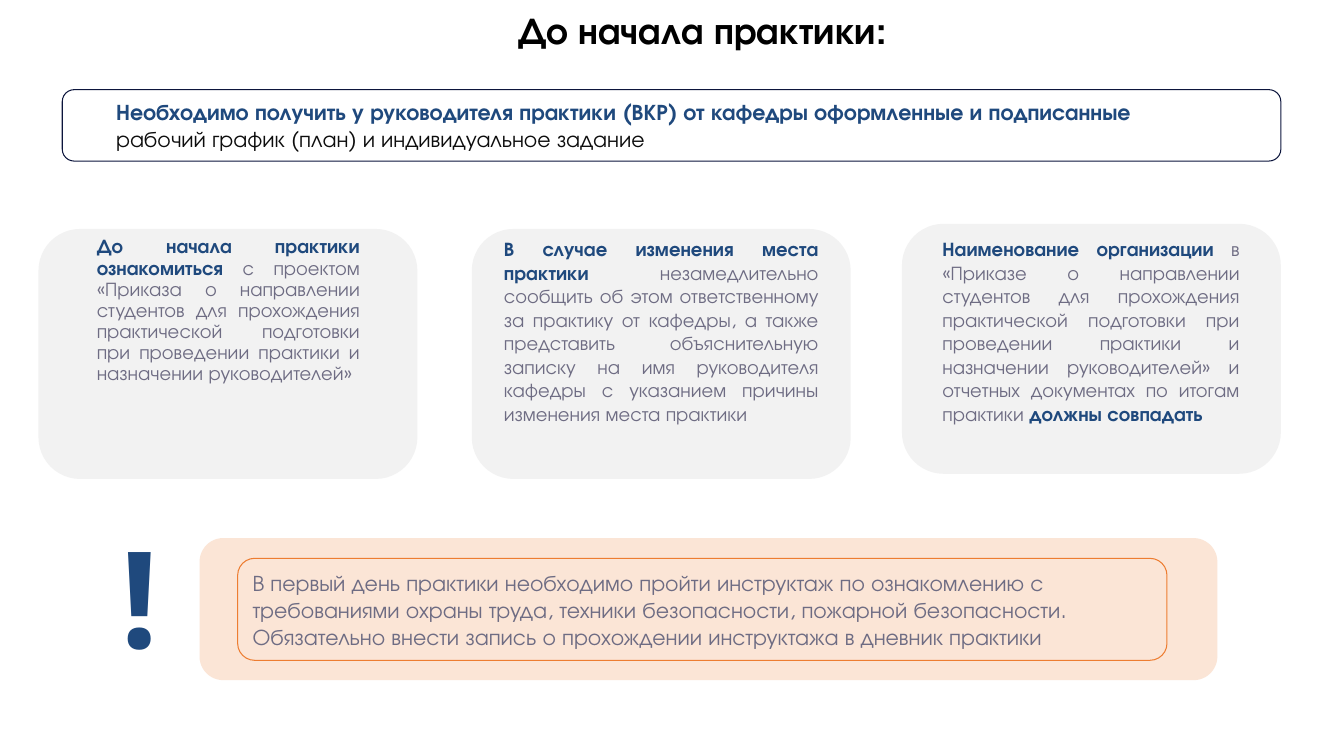
from dataclasses import dataclass, field

from pptx import Presentation
from pptx.dml.color import RGBColor
from pptx.enum.shapes import MSO_SHAPE as Shape
from pptx.enum.text import MSO_ANCHOR as Anchor, PP_ALIGN as Align
from pptx.util import Cm, Pt

NAVY, GREY, INK, BLACK = "1F497D", "6E6C83", "0D0D0D", "000000"
PALE, PEACH, ORANGE, DARK = "F2F2F2", "FBE5D6", "ED7D31", "0C153C"
FACE = "TeX Gyre Adventor"


@dataclass
class Run:
    text: str
    color: str = GREY
    bold: bool = False


@dataclass
class Box:
    """Left, top, width and height in centimetres."""
    x: float
    y: float
    w: float
    h: float

    def place(self) -> list:
        return [Cm(n) for n in (self.x, self.y, self.w, self.h)]


@dataclass
class Block:
    box: Box
    paras: list[list[Run]]
    size: float = 14
    face: str = FACE
    inset: float = 0.33
    anchor: Anchor = Anchor.TOP
    indent: float = 0
    form: dict = field(default_factory=dict)


@dataclass
class Panel:
    box: Box
    fill: str = ""
    line: str = ""


def paint(text: str) -> RGBColor:
    return RGBColor.from_string(text)


def apply(target, form: dict) -> None:
    for name, value in form.items():
        setattr(target, name, value)


def draw(slide, panel: Panel):
    shape = slide.shapes.add_shape(Shape.ROUNDED_RECTANGLE, *panel.box.place())
    shape.shadow.inherit = False
    if panel.fill:
        shape.fill.solid()
        shape.fill.fore_color.rgb = paint(panel.fill)
    else:
        shape.fill.background()
    if panel.line:
        shape.line.color.rgb = paint(panel.line)
        shape.line.width = Pt(0.75)
    else:
        shape.line.fill.background()
    return shape


def write(shape, block: Block) -> None:
    frame = shape.text_frame
    side = Cm(block.inset)
    edge = min(side, Cm(0.33))
    apply(frame, {"word_wrap": True, "vertical_anchor": block.anchor,
                  "margin_left": side, "margin_right": side,
                  "margin_top": edge if side > Cm(0.3) else Cm(0.13),
                  "margin_bottom": edge if side > Cm(0.3) else Cm(0.13)})
    for i, runs in enumerate(block.paras):
        para = frame.add_paragraph() if i else frame.paragraphs[0]
        apply(para, {"alignment": Align.LEFT} | block.form)
        if block.indent:
            para.level = 1
            props = para._p.get_or_add_pPr()
            props.set("marL", str(Cm(block.indent)))
            props.set("indent", "0")
        for item in runs:
            run = para.add_run()
            run.text = item.text
            apply(run.font, {"size": Pt(block.size), "name": block.face,
                             "bold": item.bold})
            run.font.color.rgb = paint(item.color)


JUST = {"alignment": Align.JUSTIFY}
CARDS = [Panel(Box(x, y, 9.55, 6.3), PALE)
         for x, y in ((22.73, 5.64), (11.89, 5.77), (0.97, 5.77))]

TEXTS = [
    Block(Box(2.11, 5.64, 7.29, 5.74), [[
        Run("До начала практики ознакомиться ", NAVY, True),
        Run("с проектом «Приказа о направлении студентов для прохождения "
            "практической подготовки при проведении практики и назначении "
            "руководителей»")]],
        form=JUST | {"line_spacing": 0.9, "space_before": Pt(10)}),
    Block(Box(12.37, 5.64, 8.59, 6.93), [[
        Run("В случае изменения места практики ", NAVY, True),
        Run("незамедлительно сообщить об этом ответственному за практику от "
            "кафедры, а также представить объяснительную записку на имя "
            "руководителя кафедры с указанием причины изменения места "
            "практики")]], form=JUST),
    Block(Box(23.42, 5.64, 8.15, 7.59), [[
        Run("Наименование организации ", NAVY, True),
        Run("в «Приказе о направлении студентов для прохождения практической "
            "подготовки при проведении практики и назначении руководителей» "
            "и отчетных документах по итогам практики "),
        Run("должны совпадать", NAVY, True)]], form=JUST),
    Block(Box(2.59, -0.03, 30.23, 3.07),
          [[Run("До начала практики:", BLACK, True)]], size=26.7,
          form={"alignment": Align.CENTER, "line_spacing": 0.9,
                "space_before": Pt(7.5)}),
    Block(Box(2.79, 12.8, 2.92, 4.37), [[Run("!", NAVY, True)]], size=96,
          face="Open Sans", inset=0.25, anchor=Anchor.MIDDLE),
]

TASK = Block(Box(1.57, 2.26, 30.71, 1.8), [
    [Run("Необходимо получить у руководителя практики (ВКР) от кафедры "
         "оформленные и подписанные", NAVY, True)],
    [Run("рабочий график (план) и индивидуальное задание", INK)]],
    size=16, inset=0.25, anchor=Anchor.MIDDLE, indent=1.02)
SAFETY = Block(Box(5.99, 14.07, 23.42, 2.57), [
    [Run("В первый день практики необходимо пройти инструктаж по ознакомлению "
         "с требованиями охраны труда, техники безопасности, пожарной "
         "безопасности.")],
    [Run("Обязательно внести запись о прохождении инструктажа в дневник "
         "практики")]],
    size=16, inset=0.25, anchor=Anchor.MIDDLE)


def main() -> None:
    deck = Presentation()
    apply(deck, {"slide_width": Cm(33.87), "slide_height": Cm(19.05)})
    slide = deck.slides.add_slide(deck.slide_layouts[6])
    for panel in [*CARDS, Panel(Box(5.03, 13.56, 25.65, 3.58), PEACH)]:
        draw(slide, panel)
    for block, line in ((TASK, DARK), (SAFETY, ORANGE)):
        write(draw(slide, Panel(block.box, line=line)), block)
    for block in TEXTS:
        write(slide.shapes.add_textbox(*block.box.place()), block)
    deck.save("out.pptx")


if __name__ == "__main__":
    main()
